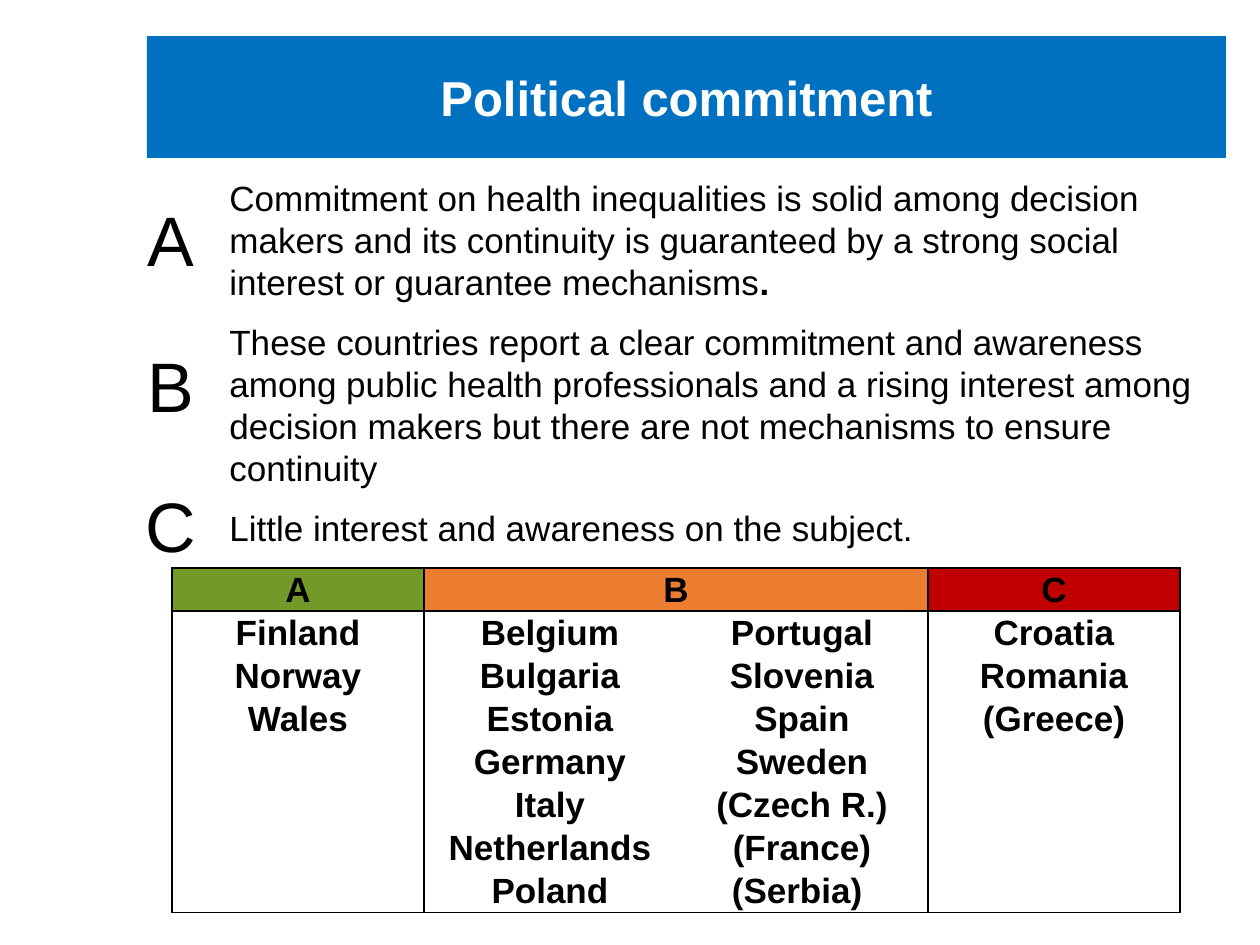
import dataclasses

import pptx
import pptx.dml.color
import pptx.enum.shapes
import pptx.enum.text
import pptx.oxml
import pptx.oxml.ns
import pptx.util

ALIGN = pptx.enum.text.PP_ALIGN
ANCHOR = pptx.enum.text.MSO_ANCHOR


@dataclasses.dataclass(frozen=True)
class Theme:
    """Hold the colours and type sizes of the slide."""

    font: str = "Arial"
    ink: str = "000000"
    paper: str = "FFFFFF"
    banner: str = "0070C0"
    good: str = "739A28"
    middle: str = "ED7D31"
    poor: str = "C00000"
    title: int = 28
    letter: int = 40
    body: int = 20
    leading: int = 24


THEME = Theme()
GRADES = (
    ("A", (140, 198), (170, 198), (
        ("Commitment on health inequalities is solid among decision makers and its "
         "continuity is guaranteed by a strong social interest or guarantee mechanisms", False),
        (".", True))),
    ("B", (335, 100), (314, 198), (
        ("These countries report a clear commitment and awareness among public health "
         "professionals and a rising interest among decision makers but there are not "
         "mechanisms to ensure continuity", False),)),
    ("C", (475, 100), (500, 67), (
        ("Little interest and awareness on the subject.", False),)),
)
HEADERS = (("A", THEME.good), ("B", THEME.middle), ("", THEME.middle), ("C", THEME.poor))
COUNTRIES = (
    ("Finland", "Norway", "Wales"),
    ("Belgium", "Bulgaria", "Estonia", "Germany", "Italy", "Netherlands", "Poland"),
    ("Portugal", "Slovenia", "Spain", "Sweden", "(Czech R.)", "(France)", "(Serbia) "),
    ("Croatia", "Romania", "(Greece)"),
)
COLUMN_SIDES = ("LR", "L", "R", "LR")
ROW_HEIGHTS = (40, 40, 40, 40, 42, 42, 40, 39)


def px(count):
    """Turn whole pixels into EMU."""
    return pptx.util.Emu(round(count * 914400 / 126))


def rgb(code):
    """Turn a hex code into a colour."""
    return pptx.dml.color.RGBColor.from_string(code)


def add_span(para, text, size, bold=False, color=THEME.ink):
    """Add one styled run to a paragraph."""
    span = para.add_run()
    span.text = text
    span.font.name = THEME.font
    span.font.size = pptx.util.Pt(size)
    span.font.bold = bold
    span.font.color.rgb = rgb(color)


def add_banner(page, text):
    """Add the filled title bar."""
    banner = page.shapes.add_shape(
        pptx.enum.shapes.MSO_SHAPE.RECTANGLE, px(147), px(36), px(1079), px(122))
    banner.shadow.inherit = False
    banner.fill.solid()
    banner.fill.fore_color.rgb = rgb(THEME.banner)
    banner.line.fill.background()
    banner.text_frame.vertical_anchor = ANCHOR.MIDDLE
    para = banner.text_frame.paragraphs[0]
    para.alignment = ALIGN.CENTER
    add_span(para, text, THEME.title, True, THEME.paper)


def add_box(page, left, top, width, height, anchor):
    """Add a wrapping text box and return its first paragraph."""
    box = page.shapes.add_textbox(px(left), px(top), px(width), px(height))
    box.text_frame.word_wrap = True
    box.text_frame.vertical_anchor = anchor
    return box.text_frame.paragraphs[0]


def add_grade(page, letter, letter_place, text_place, spans):
    """Add a grade letter with its description."""
    para = add_box(page, 127, *with_width(letter_place, 88), ANCHOR.MIDDLE)
    para.alignment = ALIGN.CENTER
    add_span(para, letter, THEME.letter)
    para = add_box(page, 217, *with_width(text_place, 992), ANCHOR.TOP)
    para.line_spacing = pptx.util.Pt(THEME.leading)
    for text, bold in spans:
        add_span(para, text, THEME.body, bold)


def with_width(place, width):
    """Put a width between a top and a height."""
    top, height = place
    return top, width, height


def set_borders(cell, sides):
    """Draw the named sides of a cell and clear the others."""
    properties = cell._tc.get_or_add_tcPr()
    namespace = pptx.oxml.ns.nsdecls("a")
    for side in "LRTB":
        paint = "<a:noFill/>"
        if side in sides:
            paint = f'<a:solidFill><a:srgbClr val="{THEME.ink}"/></a:solidFill>'
        properties.append(pptx.oxml.parse_xml(
            f'<a:ln{side} {namespace} w="12700">{paint}</a:ln{side}>'))


def fill_cell(cell, text, color, sides):
    """Style one table cell and write its text."""
    set_borders(cell, sides)
    cell.fill.solid()
    cell.fill.fore_color.rgb = rgb(color)
    cell.margin_left = cell.margin_right = cell.margin_top = px(1)
    cell.margin_bottom = 0
    cell.vertical_anchor = ANCHOR.MIDDLE
    if text:
        para = cell.text_frame.paragraphs[0]
        para.alignment = ALIGN.CENTER
        add_span(para, text, THEME.body, True)


def add_country_table(page):
    """Add the table of countries by grade."""
    rows = len(ROW_HEIGHTS)
    table = page.shapes.add_table(
        rows, len(HEADERS), px(172), px(568), px(1008), px(sum(ROW_HEIGHTS))).table
    for row, height in zip(table.rows, ROW_HEIGHTS):
        row.height = px(height)
    table.cell(0, 1).merge(table.cell(0, 2))
    for column, (header, names, sides) in enumerate(zip(HEADERS, COUNTRIES, COLUMN_SIDES)):
        table.columns[column].width = px(252)
        fill_cell(table.cell(0, column), *header, sides + "TB")
        for row in range(1, rows):
            text = names[row - 1] if row <= len(names) else ""
            edge = {1: "T", rows - 1: "B"}.get(row, "")
            fill_cell(table.cell(row, column), text, THEME.paper, sides + edge)


def main():
    """Build and save the slide."""
    deck = pptx.Presentation()
    deck.slide_width, deck.slide_height = px(1260), px(945)
    page = deck.slides.add_slide(deck.slide_layouts[6])
    add_banner(page, "Political commitment")
    for grade in GRADES:
        add_grade(page, *grade)
    add_country_table(page)
    deck.save("out.pptx")


if __name__ == "__main__":
    main()
